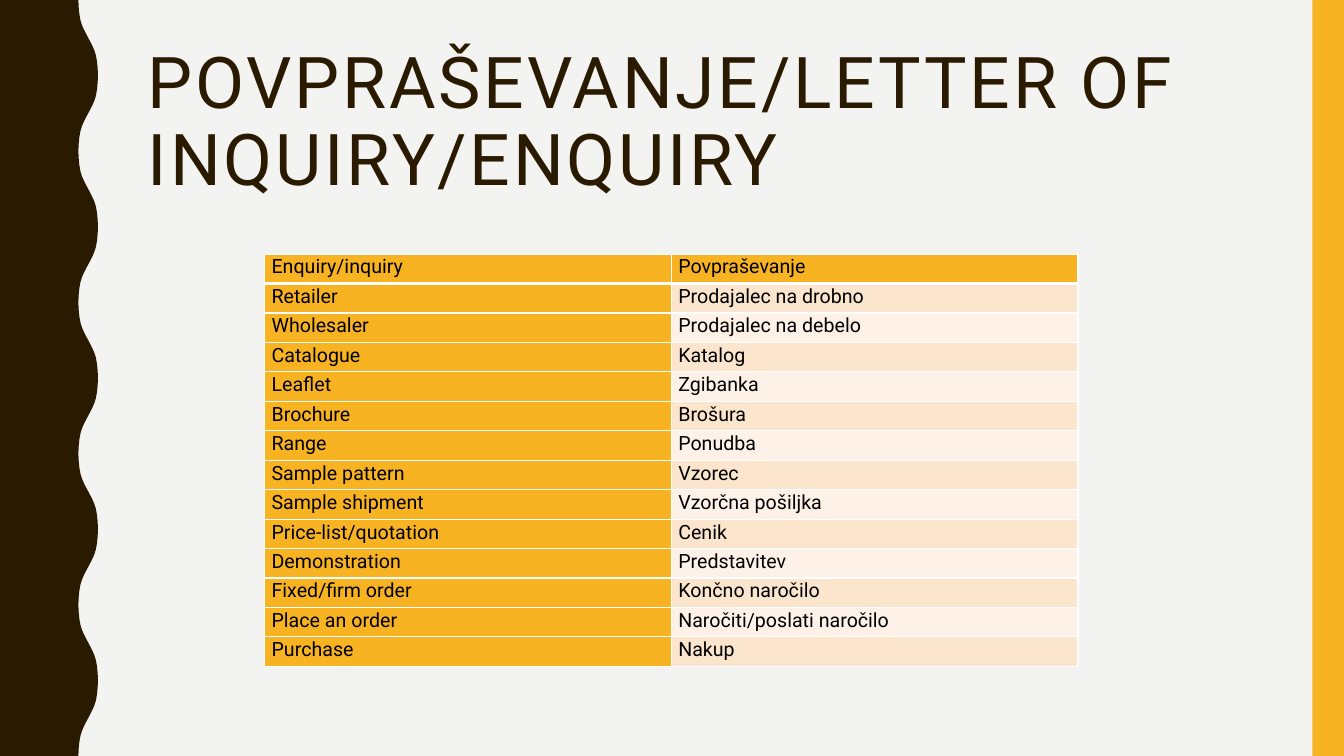
from dataclasses import dataclass

from lxml.etree import SubElement
from pptx import Presentation
from pptx.dml.color import RGBColor as Color
from pptx.enum.shapes import MSO_SHAPE as Shape
from pptx.enum.text import MSO_ANCHOR as Anchor, MSO_AUTO_SIZE as AutoSize, PP_ALIGN as Align
from pptx.oxml.ns import qn
from pptx.util import Pt

# Content
TITLE = "POVPRAŠEVANJE/LETTER OF INQUIRY/ENQUIRY"
VOCABULARY = [
    ("Enquiry/inquiry", "Povpraševanje"),
    ("Retailer", "Prodajalec na drobno"),
    ("Wholesaler", "Prodajalec na debelo"),
    ("Catalogue", "Katalog"),
    ("Leaflet", "Zgibanka"),
    ("Brochure", "Brošura"),
    ("Range", "Ponudba"),
    ("Sample pattern", "Vzorec"),
    ("Sample shipment", "Vzorčna pošiljka"),
    ("Price-list/quotation", "Cenik"),
    ("Demonstration", "Predstavitev"),
    ("Fixed/firm order", "Končno naročilo"),
    ("Place an order", "Naročiti/poslati naročilo"),
    ("Purchase", "Nakup"),
]


@dataclass(frozen=True)
class Theme:
    font: str = "Roboto"
    title_size: float = 51
    cell_size: float = 14
    page: str = "F3F3F2"
    dark: str = "2A1A00"
    gold: str = "F8B323"
    odd_row: str = "FCE5CD"
    even_row: str = "FEF2E8"
    text: str = "000000"
    rule: str = "FFFFFF"


THEME = Theme()

# Layout, in points
PAGE_WIDTH, PAGE_HEIGHT = 960, 540
STRIPE_WIDTH = 22.5
TITLE_BOX = (98.5, 30, 801.5, 117.5)
TABLE_LEFT, TABLE_TOP = 189, 181.5
COLUMN_WIDTH, ROW_HEIGHT = 290.5, 21.04
CELL_INSET = 5
WAVE_COUNT, WAVE_LEFT, WAVE_DEPTH = 5, 56, 14
WAVE_LENGTH = PAGE_HEIGHT / WAVE_COUNT
# First quarter of one wave: (distance right, distance down)
WAVE_QUARTER = [(0, 0), (0.2, 5), (0.7, 10), (1.5, 14.5), (2.6, 18), (3.9, 21), (5.4, 24), (7, 27)]


def paint(shape, color):
    shape.fill.solid()
    shape.fill.fore_color.rgb = Color.from_string(color)
    shape.line.fill.background()
    shape.shadow.inherit = False


def write(frame, text, *, size, color, line_spacing, tracking=0):
    para = frame.paragraphs[0]
    para.alignment = Align.LEFT
    para.line_spacing = line_spacing
    para.space_before = para.space_after = Pt(0)
    span = para.add_run()
    span.text = text
    span.font.name = THEME.font
    span.font.size = Pt(size)
    span.font.bold = False
    span.font.color.rgb = Color.from_string(color)
    if tracking:
        span.font._element.set("spc", str(tracking * 100))


def add_wavy_edge(page):
    half = WAVE_LENGTH / 2
    rising = WAVE_QUARTER + [(WAVE_DEPTH - x, half - y) for x, y in WAVE_QUARTER[-2::-1]]
    wave = rising + [(x, WAVE_LENGTH - y) for x, y in rising[-2::-1]]
    edge = [(Pt(WAVE_LEFT + x), Pt(number * WAVE_LENGTH + y))
            for number in range(WAVE_COUNT) for x, y in wave]
    outline = page.shapes.build_freeform(0, 0)
    outline.add_line_segments(edge + [(0, Pt(PAGE_HEIGHT))], close=True)
    paint(outline.convert_to_shape(), THEME.dark)


def add_borders(cell, top, bottom):
    properties = cell._tc.get_or_add_tcPr()
    for side, width in (("L", 1), ("R", 1), ("T", top), ("B", bottom)):
        line = SubElement(properties, qn(f"a:ln{side}"), w=str(Pt(width)))
        fill = SubElement(line, qn("a:solidFill"))
        SubElement(fill, qn("a:srgbClr"), val=THEME.rule)


def cell_color(row, column):
    if row == 0 or column == 0:
        return THEME.gold
    return THEME.odd_row if row % 2 else THEME.even_row


def add_vocabulary(page):
    rows, columns = len(VOCABULARY), len(VOCABULARY[0])
    table = page.shapes.add_table(
        rows, columns, Pt(TABLE_LEFT), Pt(TABLE_TOP),
        Pt(columns * COLUMN_WIDTH), Pt(rows * ROW_HEIGHT)).table
    table.first_row = table.horz_banding = False
    for column in table.columns:
        column.width = Pt(COLUMN_WIDTH)
    for row, words in enumerate(VOCABULARY):
        table.rows[row].height = Pt(ROW_HEIGHT)
        for column, word in enumerate(words):
            cell = table.cell(row, column)
            cell.margin_left = cell.margin_right = Pt(CELL_INSET)
            cell.margin_top = cell.margin_bottom = 0
            cell.vertical_anchor = Anchor.TOP
            add_borders(cell, top=3 if row == 1 else 1, bottom=3 if row == 0 else 1)
            cell.fill.solid()
            cell.fill.fore_color.rgb = Color.from_string(cell_color(row, column))
            write(cell.text_frame, word, size=THEME.cell_size, color=THEME.text, line_spacing=1.07)


def main():
    deck = Presentation()
    deck.slide_width, deck.slide_height = Pt(PAGE_WIDTH), Pt(PAGE_HEIGHT)
    page = deck.slides.add_slide(deck.slide_layouts[5])
    page.background.fill.solid()
    page.background.fill.fore_color.rgb = Color.from_string(THEME.page)

    # Side decorations
    add_wavy_edge(page)
    stripe = page.shapes.add_shape(
        Shape.RECTANGLE, Pt(PAGE_WIDTH - STRIPE_WIDTH), 0, Pt(STRIPE_WIDTH), Pt(PAGE_HEIGHT))
    paint(stripe, THEME.gold)

    # Title
    title = page.shapes.title
    title.left, title.top, title.width, title.height = map(Pt, TITLE_BOX)
    frame = title.text_frame
    frame.word_wrap = True
    frame.auto_size = AutoSize.NONE
    frame.vertical_anchor = Anchor.MIDDLE
    write(frame, TITLE, size=THEME.title_size, color=THEME.dark, line_spacing=0.9, tracking=2)

    # Vocabulary table
    add_vocabulary(page)
    deck.save("out.pptx")


if __name__ == "__main__":
    main()
